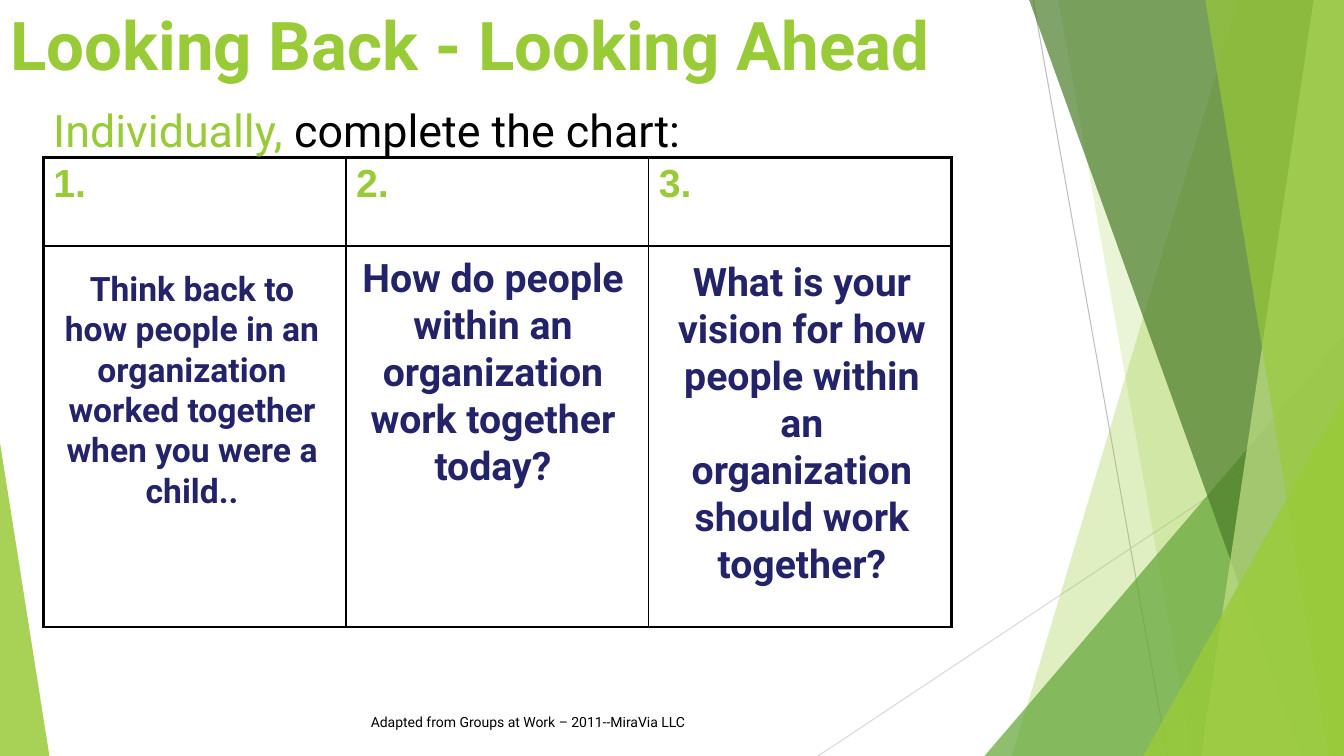
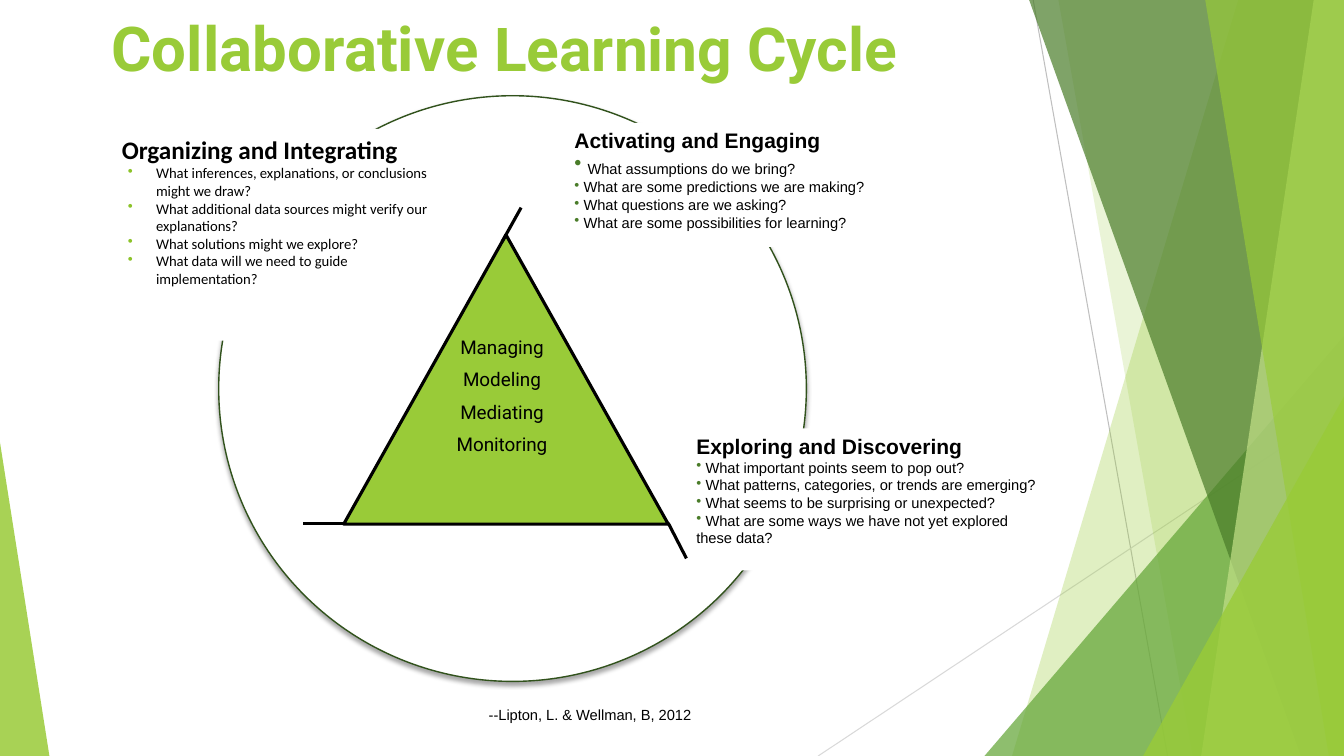
"""Builds two slides on collaborative learning, on a grid of 40 columns."""
from lxml import etree
from pptx import Presentation
from pptx.dml.color import RGBColor
from pptx.enum.shapes import MSO_CONNECTOR, MSO_SHAPE
from pptx.enum.text import MSO_ANCHOR, MSO_AUTO_SIZE, PP_ALIGN
from pptx.oxml.ns import qn
from pptx.util import Inches, Pt

COLUMNS, ROWS = 40, 22.5
CELL = Inches(40 / 3) // COLUMNS
TITLE_ONLY = 5

LIME = RGBColor(0x99, 0xCB, 0x38)
PALE_LIME = RGBColor(0xC2, 0xE0, 0x88)
BULLET_LIME = RGBColor(0x8C, 0xC3, 0x29)
GREEN = RGBColor(0x63, 0xA5, 0x37)
DARK_GREEN = RGBColor(0x4A, 0x7C, 0x29)
RING_GREEN = RGBColor(0x31, 0x52, 0x1C)
NAVY = RGBColor(0x23, 0x23, 0x69)
GRAY = RGBColor(0xBF, 0xBF, 0xBF)
LIGHT_GRAY = RGBColor(0xD9, 0xD9, 0xD9)
BLACK = RGBColor(0, 0, 0)
WHITE = RGBColor(0xFF, 0xFF, 0xFF)

ROBOTO, ARIAL, CALIBRI = "Roboto", "Arial", "Calibri"
LEFT, CENTER = PP_ALIGN.LEFT, PP_ALIGN.CENTER
TOP, NO_FIT = MSO_ANCHOR.TOP, MSO_AUTO_SIZE.NONE
STRAIGHT = MSO_CONNECTOR.STRAIGHT
TRIANGLE, OVAL = MSO_SHAPE.ISOSCELES_TRIANGLE, MSO_SHAPE.OVAL

QUESTIONS = [
    ("Think back to how people in an organization worked together when you were a child..",
     24, (1.62, 7.83, 8.19, 10)),
    ("How do people within an organization work together today?",
     28, (10.44, 7.38, 8.46, 10.2)),
    ("What is your vision for how people within an organization should work together?",
     28, (19.53, 7.5, 8.67, 10.2)),
]
ACTIVATING = ["What assumptions do we bring?",
              "What are some predictions we are making?",
              "What questions are we asking?",
              "What are some possibilities for learning?"]
EXPLORING = ["What important points seem to pop out?",
             "What patterns, categories, or trends are emerging?",
             "What seems to be surprising or unexpected?",
             "What are some ways we have not yet explored these data?"]
ORGANIZING = ["What inferences, explanations, or conclusions might we draw?",
              "What additional data sources might verify our explanations?",
              "What solutions might we explore?",
              "What data will we need to guide implementation?"]
ROLES = ["Managing", "Modeling", "Mediating", "Monitoring"]


def cells(*counts):
    """Turn grid cells into lengths."""
    return [round(count * CELL) for count in counts]


def write(para, text, size, color=BLACK, font=ROBOTO, bold=False, align=LEFT):
    """Add a formatted span of text to a paragraph."""
    para.alignment = align
    span = para.add_run()
    span.text = text
    span.font.name = font
    span.font.size = Pt(size)
    span.font.bold = bold
    span.font.color.rgb = color


def add_bullet(para, color, margin=0, hang=0):
    """Give a paragraph a coloured bullet and a hanging indent."""
    settings = para._p.get_or_add_pPr()
    settings.set("marL", str(Inches(margin)))
    settings.set("indent", str(-Inches(hang)))
    tint = etree.SubElement(settings, qn("a:buClr"))
    etree.SubElement(tint, qn("a:srgbClr"), val=str(color))
    etree.SubElement(settings, qn("a:buChar"), char="•")


def add_box(slide, place, fill=None):
    """Add a wrapping text box and return its text frame."""
    box = slide.shapes.add_textbox(*cells(*place))
    if fill is not None:
        box.fill.solid()
        box.fill.fore_color.rgb = fill
    frame = box.text_frame
    frame.word_wrap = True
    frame.auto_size = NO_FIT
    return frame


def add_text(slide, place, text, size, **style):
    """Add a text box with one paragraph."""
    write(add_box(slide, place).paragraphs[0], text, size, **style)


def add_line(slide, start, end, color, width):
    """Add a straight line without a shadow."""
    line = slide.shapes.add_connector(STRAIGHT, *cells(*start, *end))
    line.line.color.rgb = color
    line.line.width = Pt(width)
    etree.SubElement(line.element.spPr, qn("a:effectLst"))


def paint(shape, fill, opacity=100, line=None, width=1):
    """Set fill, opacity and outline of a shape."""
    shape.shadow.inherit = False
    shape.fill.solid()
    shape.fill.fore_color.rgb = fill
    if opacity < 100:
        color = shape.element.spPr.find(".//" + qn("a:srgbClr"))
        etree.SubElement(color, qn("a:alpha"), val=str(opacity * 1000))
    if line is None:
        shape.line.fill.background()
    else:
        shape.line.color.rgb = line
        shape.line.width = Pt(width)


def add_pane(slide, top, bottom, fill, opacity):
    """Add a full-height pane from a slanted edge to the right border."""
    builder = slide.shapes.build_freeform(*cells(top, 0))
    corners = [(COLUMNS, 0), (COLUMNS, ROWS), (bottom, ROWS)]
    builder.add_line_segments([cells(*corner) for corner in corners])
    paint(builder.convert_to_shape(), fill, opacity)


def add_triangle(slide, place, peak, fill, opacity=100, **outline):
    """Add a triangle with its peak at a share of its width."""
    triangle = slide.shapes.add_shape(TRIANGLE, *cells(*place))
    triangle.adjustments[0] = peak
    paint(triangle, fill, opacity, **outline)


def add_backdrop(layout, slide):
    """Draw the green panes and move them to the shared layout."""
    add_line(slide, (30.75, 0), (34.75, ROWS), GRAY, 0.75)
    add_line(slide, (COLUMNS, 12.1), (24.35, ROWS), LIGHT_GRAY, 0.75)
    add_pane(slide, 36.85, 30.12, LIME, 30)
    add_pane(slide, 31.5, 35.5, LIME, 20)
    add_triangle(slide, (29.3, 10, 10.7, 12.5), 1, GREEN, 72)
    add_pane(slide, 30.63, 38.72, DARK_GREEN, 70)
    add_pane(slide, 39.1, 35.75, PALE_LIME, 70)
    add_pane(slide, 35.87, 39.55, LIME, 65)
    add_triangle(slide, (34.02, 11.8, 5.98, 10.7), 1, LIME, 80)
    add_triangle(slide, (0, 13.17, 1.47, 9.33), 0, LIME, 85)
    for shape in list(slide.shapes):
        if not shape.is_placeholder:
            layout.shapes.element.append(shape.element)


def set_title(slide, place, spans, align=LEFT):
    """Place the title and write its spans in bold lime."""
    title = slide.shapes.title
    title.left, title.top, title.width, title.height = cells(*place)
    frame = title.text_frame
    frame.vertical_anchor = TOP
    frame.auto_size = NO_FIT
    for text, size in spans:
        write(frame.paragraphs[0], text, size, LIME, bold=True, align=align)


def set_borders(cell, widths):
    """Draw the black borders of a table cell, keyed by side."""
    settings = cell._tc.get_or_add_tcPr()
    for side, width in widths.items():
        line = etree.SubElement(settings, qn("a:ln" + side), w=str(Pt(width)))
        fill = etree.SubElement(line, qn("a:solidFill"))
        etree.SubElement(fill, qn("a:srgbClr"), val=str(BLACK))


def add_chart_table(slide, place, heights, headings):
    """Add the table with numbered headings and a heavy frame."""
    table = slide.shapes.add_table(len(heights), len(headings), *cells(*place)).table
    table.first_row = table.horz_banding = False
    last_row, last_column = len(heights) - 1, len(headings) - 1
    for row, height in zip(table.rows, cells(*heights)):
        row.height = height
    for r in range(len(heights)):
        for c in range(len(headings)):
            cell = table.cell(r, c)
            edges = {"L": c == 0, "R": c == last_column, "T": r == 0, "B": r == last_row}
            set_borders(cell, {side: 2.25 if outer else 1 for side, outer in edges.items()})
            cell.fill.background()
    for c, heading in enumerate(headings):
        para = table.cell(0, c).text_frame.paragraphs[0]
        write(para, heading, 28, LIME, ARIAL, bold=True)


def add_phase(slide, place, heading, items, size=15, font=ARIAL, color=DARK_GREEN,
              margin=0, hang=0, lead=" ", first_lead_size=10.5):
    """Add a white card with a bold heading and bulleted questions."""
    frame = add_box(slide, place, WHITE)
    write(frame.paragraphs[0], heading, size, font=font, bold=True)
    for index, item in enumerate(items):
        para = frame.add_paragraph()
        add_bullet(para, color, margin, hang)
        if lead:
            write(para, lead, 10.5 if index else first_lead_size, font=font)
        write(para, item, 10.5, font=font)


def add_ring(slide, place):
    """Add the white circle with a soft shadow below."""
    ring = slide.shapes.add_shape(OVAL, *cells(*place))
    paint(ring, WHITE, line=RING_GREEN)
    effects = ring.element.spPr.find(qn("a:effectLst"))
    shadow = etree.SubElement(effects, qn("a:outerShdw"), blurRad=str(Pt(3)),
                              dist=str(Pt(2)), dir="5400000", rotWithShape="0")
    color = etree.SubElement(shadow, qn("a:srgbClr"), val=str(BLACK))
    etree.SubElement(color, qn("a:alpha"), val="35000")


def fill_looking_slide(slide):
    """Build the slide with the three-column chart."""
    set_title(slide, (0, -0.06, 30.87, 3.75), [("Looking Back - Looking Ahead", 48)])
    add_chart_table(slide, (1.29, 4.68, 27.03, 13.98), (2.64, 11.34), ("1.", "2.", "3."))
    for question, size, place in QUESTIONS:
        add_text(slide, place, question, size, color=NAVY, bold=True, align=CENTER)
    para = add_box(slide, (1.29, 2.91, 25.59, 1.92)).paragraphs[0]
    write(para, "Individually, ", 32, LIME)
    write(para, "complete the chart:", 32)
    add_text(slide, (10.74, 21.09, 10.47, 0.81),
             "Adapted from Groups at Work – 2011--MiraVia LLC", 10)


def fill_cycle_slide(slide):
    """Build the slide with the learning cycle."""
    set_title(slide, (0, 0.15, 30.03, 1.47),
              [("Collaborative", 44.1), (" Learning Cycle", 43.2)], CENTER)
    add_ring(slide, (6.51, 2.85, 17.49, 17.43))
    add_phase(slide, (16.8, 3.66, 13.71, 3.69), "Activating and Engaging", ACTIVATING,
              first_lead_size=15)
    add_phase(slide, (20.43, 12.75, 10.8, 4.23), "Exploring and Discovering", EXPLORING)
    add_phase(slide, (3.33, 3.84, 9.72, 6.3), "Organizing and Integrating", ORGANIZING,
              size=18, font=CALIBRI, color=BULLET_LIME, margin=0.34, hang=0.28, lead="")
    add_triangle(slide, (10.23, 6.99, 9.66, 8.61), 0.5, LIME, line=BLACK, width=2.25)
    for start, end in [((10.23, 15.57), (9.03, 15.57)),
                       ((19.89, 15.57), (20.43, 16.62)),
                       ((14.94, 7.2), (15.51, 6.18))]:
        add_line(slide, start, end, BLACK, 2.25)
    frame = add_box(slide, (12.12, 9.84, 5.64, 4.38))
    for index, role in enumerate(ROLES):
        para = frame.add_paragraph() if index else frame.paragraphs[0]
        write(para, role, 13.5, align=CENTER)
        if index:
            para.space_before = Pt(7)
    add_text(slide, (14.25, 20.85, 7.11, 0.84), "--Lipton, L. & Wellman, B, 2012", 10.5,
             font=ARIAL)


def main():
    """Build and save the deck."""
    deck = Presentation()
    deck.slide_width, deck.slide_height = cells(COLUMNS, ROWS)
    layout = deck.slide_layouts[TITLE_ONLY]
    looking, cycle = [deck.slides.add_slide(layout) for _ in range(2)]
    add_backdrop(layout, looking)
    fill_looking_slide(looking)
    fill_cycle_slide(cycle)
    deck.save("out.pptx")


if __name__ == "__main__":
    main()
